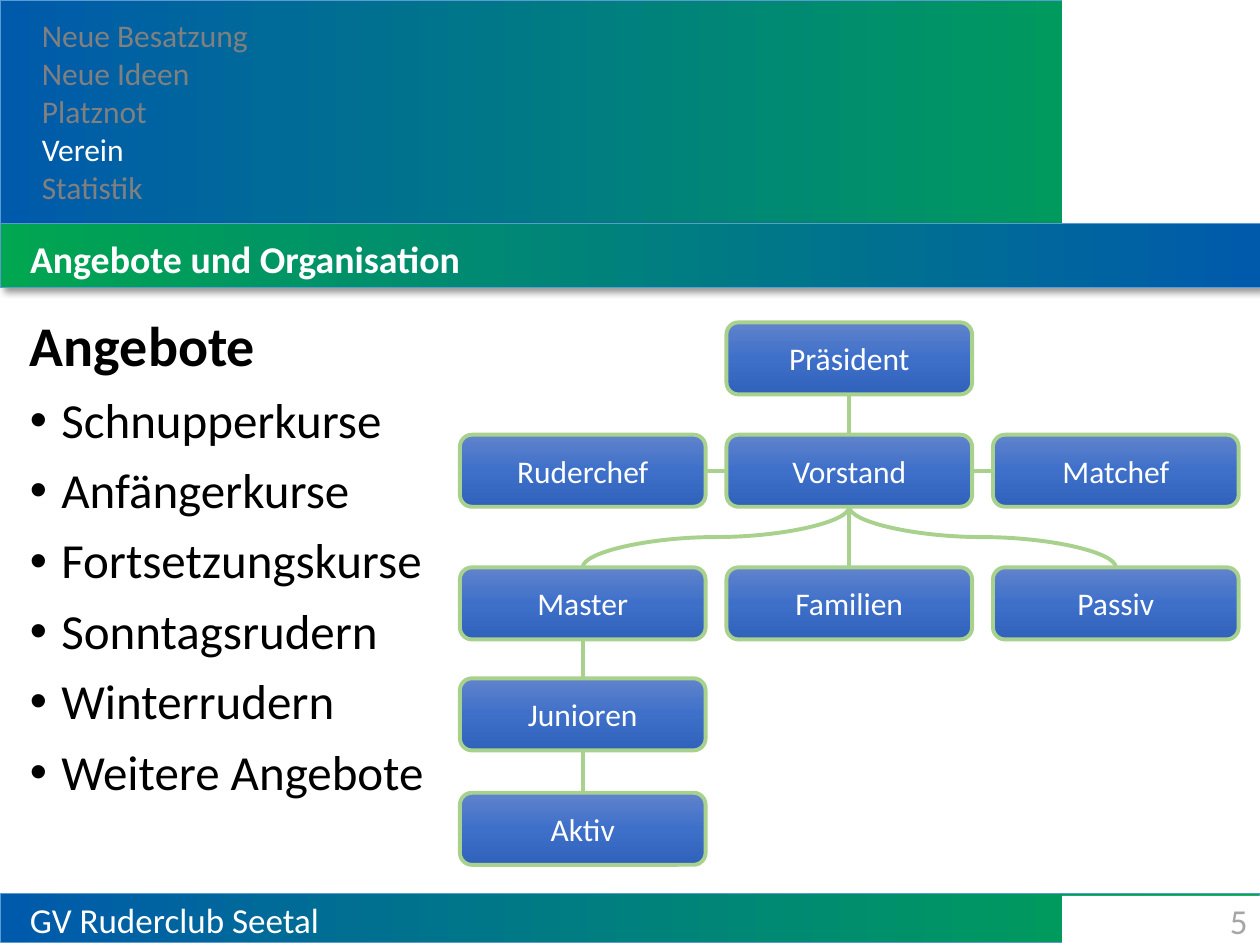
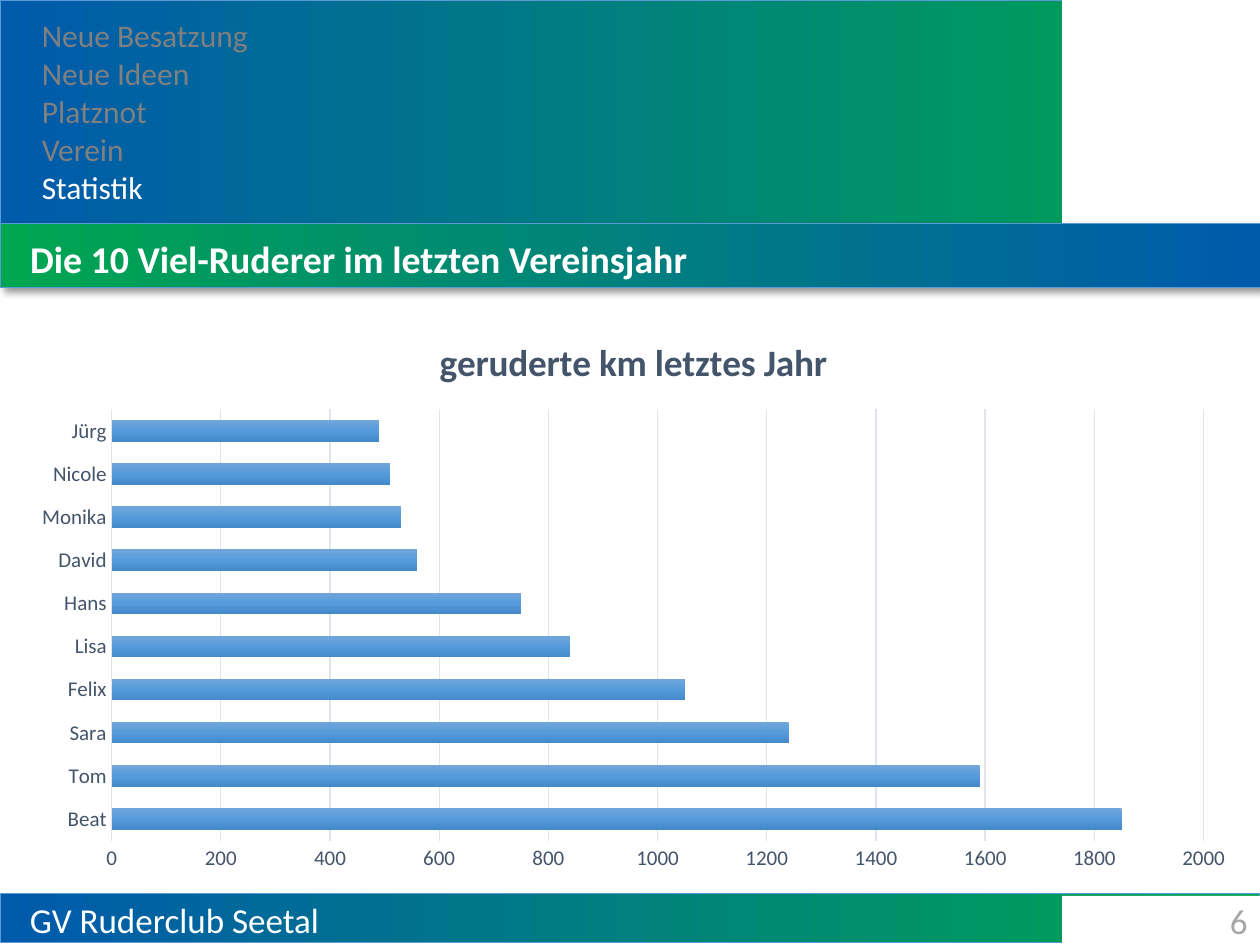
import pptx
import pptx.chart.data
import pptx.dml.color
import pptx.enum.chart
import pptx.enum.shapes
import pptx.enum.text
import pptx.oxml
import pptx.oxml.ns
import pptx.util

Pt = pptx.util.Pt
RGB = pptx.dml.color.RGBColor
SHAPE = pptx.enum.shapes.MSO_SHAPE
CONNECTOR = pptx.enum.shapes.MSO_CONNECTOR
ALIGN = pptx.enum.text.PP_ALIGN
ANCHOR = pptx.enum.text.MSO_ANCHOR
qn = pptx.oxml.ns.qn

# Content
TOPICS = ["Neue Besatzung", "Neue Ideen", "Platznot", "Verein", "Statistik"]
FOOTER = "GV Ruderclub Seetal"
FIRST_NUMBER = 5

OFFERS_TITLE = "Angebote und Organisation"
OFFERS_HEADING = "Angebote"
OFFERS = ["Schnupperkurse", "Anfängerkurse", "Fortsetzungskurse",
          "Sonntagsrudern", "Winterrudern", "Weitere Angebote"]
ROLES = {  # name: (column, row)
    "Präsident": (1, 0),
    "Ruderchef": (0, 1), "Vorstand": (1, 1), "Matchef": (2, 1),
    "Master": (0, 2), "Familien": (1, 2), "Passiv": (2, 2),
    "Junioren": (0, 3),
    "Aktiv": (0, 4),
}
LINKS = [("Präsident", "Vorstand"), ("Ruderchef", "Vorstand"),
         ("Vorstand", "Matchef"), ("Vorstand", "Master"),
         ("Vorstand", "Familien"), ("Vorstand", "Passiv"),
         ("Master", "Junioren"), ("Junioren", "Aktiv")]

ROWERS_TITLE = "Die 10 Viel-Ruderer im letzten Vereinsjahr"
KM_TITLE = "geruderte km letztes Jahr"
KM = {"Beat": 1850, "Tom": 1590, "Sara": 1240, "Felix": 1050, "Lisa": 840,
      "Hans": 750, "David": 560, "Monika": 530, "Nicole": 510, "Jürg": 490}

# Style
FONT = "Calibri"
WHITE = RGB(0xFF, 0xFF, 0xFF)
BLACK = RGB(0x00, 0x00, 0x00)
GRAY = RGB(0x80, 0x80, 0x80)
NUMBER_GRAY = RGB(0xA6, 0xA6, 0xA6)
BLUE = RGB(0x00, 0x5A, 0xAB)
GREEN = RGB(0x00, 0xA6, 0x50)
BAND_LINE = RGB(0x5B, 0x9B, 0xD5)
ROLE_LINE = RGB(0xA9, 0xD1, 0x8E)
SLATE = RGB(0x44, 0x54, 0x6A)
GRID = RGB(0xE0, 0xE5, 0xEB)
BAND_FILL = [BLUE, GREEN]
ROLE_FILL = [RGB(0x61, 0x83, 0xCB), RGB(0x3E, 0x70, 0xCA), RGB(0x30, 0x62, 0xBB)]
BAR_FILL = [RGB(0x71, 0xA6, 0xDB), RGB(0x55, 0x9B, 0xDB), RGB(0x44, 0x8A, 0xCA)]

# Layout, in points
WIDTH, HEIGHT = 720, 540
HEADER_H = 127.5
CORNER_X = 607
LEFT, CONTENT_TOP, CONTENT_W, CONTENT_H = 10, 178, 704, 326
ROLE_X, ROLE_STEP, ROLE_W, ROLE_H = 262.8, 152.3, 140.4, 41.2
ROW_TOPS = [184.2, 248.4, 324.2, 387.6, 453]

DRAWING_NS = "http://schemas.openxmlformats.org/drawingml/2006/main"
BAND_SHADOW = (
    f'<a:effectLst xmlns:a="{DRAWING_NS}"><a:outerShdw blurRad="50800" dist="38100" '
    'dir="2700000" algn="tl" rotWithShape="0"><a:srgbClr val="000000">'
    '<a:alpha val="40000"/></a:srgbClr></a:outerShdw></a:effectLst>')


def style(font, size, color, bold=False):
    font.name, font.size, font.bold = FONT, Pt(size), bold
    font.color.rgb = color


def fill_gradient(fill, element, colors, angle=0):
    """Spread colors evenly; element is the XML that holds the fill."""
    fill.gradient()
    fill.gradient_angle = angle
    stops = next(element.iter(qn("a:gsLst")))
    for stop in list(stops):
        stops.remove(stop)
    for i, color in enumerate(colors):
        stops.append(pptx.oxml.parse_xml(
            f'<a:gs xmlns:a="{DRAWING_NS}" pos="{100000 * i // (len(colors) - 1)}">'
            f'<a:srgbClr val="{color}"/></a:gs>'))


def add_box(slide, kind, left, top, width, height, line=None, weight=0.5):
    sp = slide.shapes.add_shape(kind, Pt(left), Pt(top), Pt(width), Pt(height))
    sp.shadow.inherit = False
    if line is None:
        sp.fill.solid()
        sp.fill.fore_color.rgb = WHITE
        sp.line.fill.background()
    else:
        sp.line.color.rgb = line
        sp.line.width = Pt(weight)
    return sp


def add_band(slide, top, height):
    sp = add_box(slide, SHAPE.RECTANGLE, 0, top, WIDTH, height, BAND_LINE)
    fill_gradient(sp.fill, sp._element, BAND_FILL)
    return sp


def write(sp, text, size, color, align=ALIGN.LEFT):
    tf = sp.text_frame
    tf.text = text
    tf.word_wrap = True
    tf.vertical_anchor = ANCHOR.MIDDLE
    p = tf.paragraphs[0]
    p.alignment = align
    style(p.runs[0].font, size, color)


def add_text_box(slide, left, top, width, height):
    sp = slide.shapes.add_textbox(Pt(left), Pt(top), Pt(width), Pt(height))
    sp.text_frame.word_wrap = True
    return sp


def add_slide(prs, title, current_topic):
    slide = prs.slides.add_slide(prs.slide_layouts[5])
    add_band(slide, 0, HEADER_H)
    add_box(slide, SHAPE.RECTANGLE, CORNER_X, 0, WIDTH - CORNER_X, HEADER_H)
    title_band = add_band(slide, HEADER_H, 37)
    title_band.rotation = 180
    spPr = title_band._element.spPr
    spPr.replace(spPr.find(qn("a:effectLst")), pptx.oxml.parse_xml(BAND_SHADOW))
    add_band(slide, 510.5, 28)

    sp = slide.shapes.title
    slide.shapes._spTree.append(sp._element)
    sp.left, sp.top, sp.width, sp.height = Pt(LEFT), Pt(133), Pt(CONTENT_W), Pt(32.4)
    write(sp, title, 21.6, WHITE)
    sp.text_frame.auto_size = pptx.enum.text.MSO_AUTO_SIZE.NONE
    p = sp.text_frame.paragraphs[0]
    p.line_spacing = 0.9
    p.runs[0].font.bold = True

    write(add_text_box(slide, LEFT, 511.5, 490, 28), FOOTER, 20, WHITE)
    number = add_box(slide, SHAPE.RECTANGLE, CORNER_X, 512, WIDTH - CORNER_X, 28)
    write(number, str(FIRST_NUMBER + len(prs.slides) - 1), 20, NUMBER_GRAY, ALIGN.RIGHT)

    tf = add_text_box(slide, 16.8, 5.8, 152.6, 116.6).text_frame
    tf.text = "\n".join(TOPICS)
    for p in tf.paragraphs:
        style(p.runs[0].font, 18, WHITE if p.text == current_topic else GRAY)
    return slide


def add_offers(slide):
    tf = add_text_box(slide, LEFT, CONTENT_TOP, 251, CONTENT_H).text_frame
    tf.text = "\n".join([OFFERS_HEADING] + OFFERS)
    heading, *items = tf.paragraphs
    heading.line_spacing = 0.9
    style(heading.runs[0].font, 32, BLACK, bold=True)
    for p in items:
        p.line_spacing = 0.9
        p.space_before = Pt(10)
        pPr = p._p.get_or_add_pPr()
        pPr.set("marL", str(Pt(18)))
        pPr.set("indent", str(Pt(-18)))
        for tag, key, value in (("buFont", "typeface", "Arial"), ("buChar", "char", "•")):
            pPr.append(pptx.oxml.parse_xml(
                f'<a:{tag} xmlns:a="{DRAWING_NS}" {key}="{value}"/>'))
        style(p.runs[0].font, 28, BLACK)


def add_role(slide, name):
    column, row = ROLES[name]
    sp = add_box(slide, SHAPE.ROUNDED_RECTANGLE, ROLE_X + column * ROLE_STEP,
                 ROW_TOPS[row], ROLE_W, ROLE_H, ROLE_LINE, 2.25)
    fill_gradient(sp.fill, sp._element, ROLE_FILL, 270)
    write(sp, name, 18, WHITE, ALIGN.CENTER)
    return sp


def link_roles(slide, start, end):
    """Join side to side within a row, otherwise bottom to top."""
    same_row = start.top == end.top
    dx, dy = end.left - start.left, end.top - start.top - start.height
    curved = not same_row and dx != 0
    kind = CONNECTOR.CURVE if curved else CONNECTOR.STRAIGHT
    c = slide.shapes.add_connector(kind, 0, 0, 0, 0)
    c.begin_connect(start, 3 if same_row else 2)
    c.end_connect(end, 1 if same_row else 0)
    c.line.color.rgb = ROLE_LINE
    c.line.width = Pt(2.25)
    spPr = c._element.spPr
    spPr.append(pptx.oxml.parse_xml(f'<a:effectLst xmlns:a="{DRAWING_NS}"/>'))
    if curved:  # a quarter turn makes the curve leave and arrive vertically
        middle_x = start.left + (start.width + dx) // 2
        middle_y = start.top + start.height + dy // 2
        c.width, c.height = dy, abs(dx)
        c.left, c.top = middle_x - dy // 2, middle_y - abs(dx) // 2
        xfrm = spPr.find(qn("a:xfrm"))
        xfrm.set("rot", "5400000")
        xfrm.set("flipH", "0")
        xfrm.set("flipV", "1" if dx > 0 else "0")


def add_km_chart(slide):
    data = pptx.chart.data.CategoryChartData()
    data.categories = list(KM)
    data.add_series(KM_TITLE, list(KM.values()))
    chart = slide.shapes.add_chart(
        pptx.enum.chart.XL_CHART_TYPE.BAR_CLUSTERED, Pt(LEFT), Pt(CONTENT_TOP),
        Pt(CONTENT_W), Pt(CONTENT_H), data).chart
    style(chart.font, 10, BLACK)
    chart.has_legend = False
    chart.has_title = True
    tf = chart.chart_title.text_frame
    tf.text = KM_TITLE
    style(tf.paragraphs[0].runs[0].font, 21.3, SLATE, bold=True)
    chart.chart_title.include_in_layout = False

    for axis in (chart.category_axis, chart.value_axis):
        axis.major_tick_mark = pptx.enum.chart.XL_TICK_MARK.NONE
        axis.minor_tick_mark = pptx.enum.chart.XL_TICK_MARK.NONE
        style(axis.tick_labels.font, 12, SLATE)
    grid = chart.value_axis.major_gridlines
    for line in (chart.category_axis.format.line, grid.format.line):
        line.color.rgb = GRID
        line.width = Pt(0.75)
    chart.value_axis.format.line.fill.background()
    chart.value_axis.minimum_scale = 0
    chart.value_axis.maximum_scale = 2000
    chart.value_axis.major_unit = 200

    plot = chart.plots[0]
    plot.gap_width = 100
    plot.vary_by_categories = False
    series = plot.series[0]
    fill_gradient(series.format.fill, series._element, BAR_FILL, 270)


def main():
    prs = pptx.Presentation()
    prs.slide_width, prs.slide_height = Pt(WIDTH), Pt(HEIGHT)

    slide = add_slide(prs, OFFERS_TITLE, "Verein")
    add_offers(slide)
    roles = {name: add_role(slide, name) for name in ROLES}
    for start, end in LINKS:
        link_roles(slide, roles[start], roles[end])

    add_km_chart(add_slide(prs, ROWERS_TITLE, "Statistik"))
    prs.save("out.pptx")


if __name__ == "__main__":
    main()
